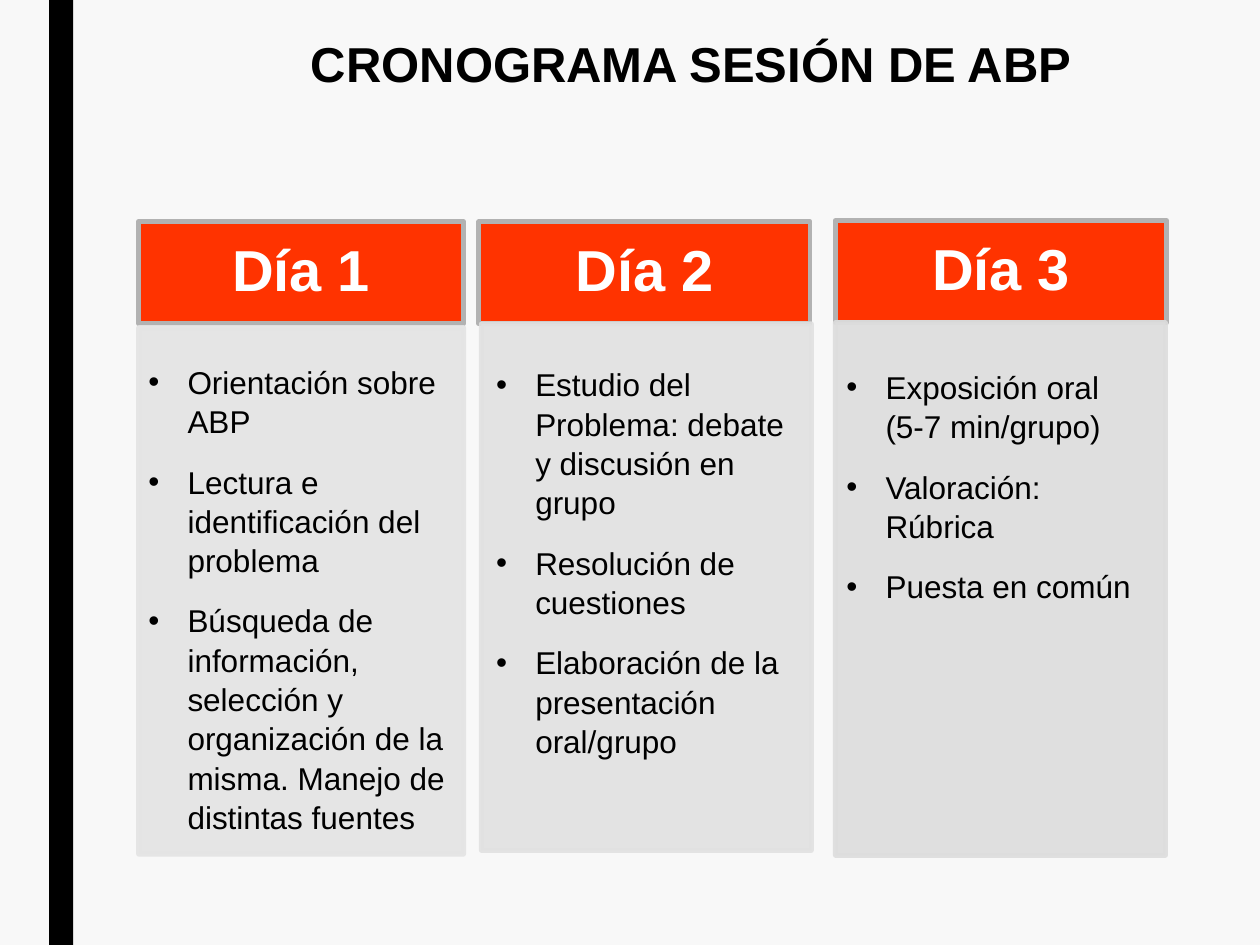
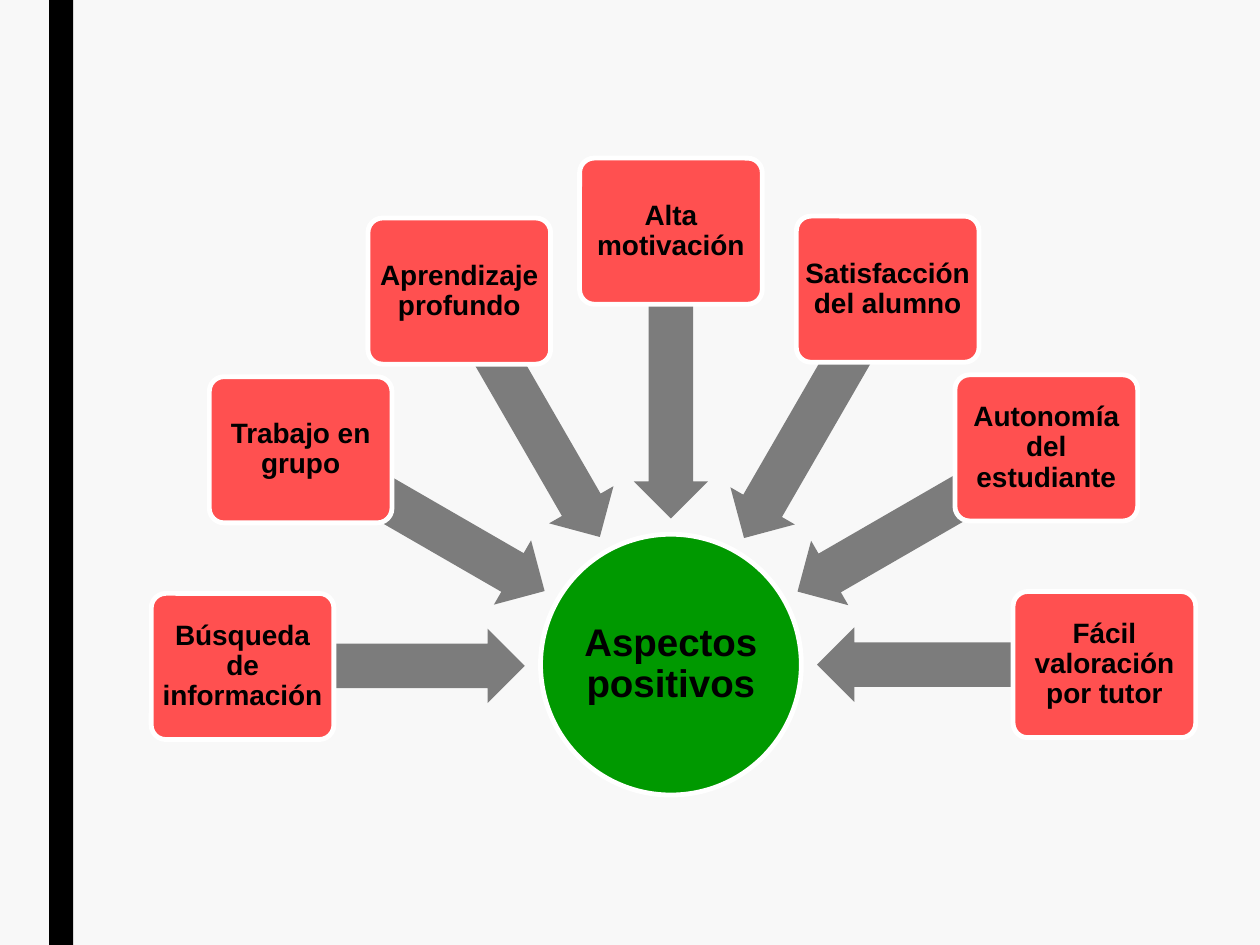
from dataclasses import dataclass
from math import cos, hypot, radians, sin

from lxml.etree import SubElement
from pptx import Presentation
from pptx.dml.color import RGBColor
from pptx.enum.shapes import MSO_SHAPE
from pptx.enum.text import MSO_ANCHOR, PP_ALIGN
from pptx.oxml.ns import qn
from pptx.util import Inches, Pt


@dataclass(frozen=True)
class Theme:
    font: str = "Arial"
    background: str = "F8F8F8"
    black: str = "000000"
    white: str = "FFFFFF"
    day_fill: str = "FF3300"
    day_border: str = "B2B2B2"
    hub_fill: str = "009900"
    aspect_fill: str = "FF5050"
    arrow_fill: str = "7C7C7C"
    title_size: float = 28
    day_size: float = 33
    list_size: float = 18
    hub_size: float = 22
    aspect_size: float = 16
    border: float = 2.75


THEME = Theme()

TITLE = "CRONOGRAMA SESIÓN DE ABP"

# Boxes are (left, top, width, height) in inches.
DAYS = [
    {
        "name": "Día 1",
        "header": (1.1, 1.76, 2.58, 0.81),
        "panel": (1.1, 2.6, 2.58, 4.18),
        "panel_fill": "E4E4E4",
        "list": (1.08, 2.82, 2.65, 3.77),
        "tasks": [
            "Orientación sobre ABP",
            "Lectura e identificación del problema",
            "Búsqueda de información, selección y organización de la misma. "
            "Manejo de distintas fuentes",
        ],
    },
    {
        "name": "Día 2",
        "header": (3.8, 1.76, 2.63, 0.81),
        "panel": (3.82, 2.57, 2.62, 4.18),
        "panel_fill": "E1E1E1",
        "list": (3.84, 2.84, 2.56, 3.16),
        "tasks": [
            "Estudio del Problema: debate y discusión en grupo",
            "Resolución de cuestiones",
            "Elaboración de la presentación oral/grupo",
        ],
    },
    {
        "name": "Día 3",
        "header": (6.63, 1.75, 2.63, 0.81),
        "panel": (6.63, 2.56, 2.62, 4.23),
        "panel_fill": "DDDDDD",
        "list": (6.62, 2.86, 2.66, 1.95),
        "tasks": [
            "Exposición oral\v(5-7 min/grupo)",
            "Valoración: Rúbrica",
            "Puesta en común",
        ],
    },
]

HUB = "Aspectos positivos"
ASPECTS = [
    "Búsqueda de información",
    "Trabajo en grupo",
    "Aprendizaje profundo",
    "Alta motivación",
    "Satisfacción del alumno",
    "Autonomía del estudiante",
    "Fácil valoración por tutor",
]

HUB_CENTER = (5.325, 5.275)
HUB_DIAMETER = 2.07
ORBIT = 3.44
LEFT_SHIFT = (0.04, 0.015)
ASPECT_SIZE = (1.45, 1.16)
ARROW_TIP_DISTANCE = 1.16
ARROW_HEIGHT = 0.59


def color(value):
    return RGBColor.from_string(value)


def centered(center, size):
    return (center[0] - size[0] / 2, center[1] - size[1] / 2, *size)


def add_box(slide, kind, box, fill, border=None):
    shape = slide.shapes.add_shape(kind, *map(Inches, box))
    shape.shadow.inherit = False
    shape.fill.solid()
    shape.fill.fore_color.rgb = color(fill)
    if border:
        shape.line.color.rgb = color(border)
        shape.line.width = Pt(THEME.border)
    else:
        shape.line.fill.background()
    return shape


def format_runs(paragraph, size, text_color=THEME.black, bold=False):
    for run in paragraph.runs:
        run.font.name = THEME.font
        run.font.size = Pt(size)
        run.font.bold = bold
        run.font.color.rgb = color(text_color)


def write_label(shape, text, size, text_color, insets):
    """Write bold text in the middle of a shape; insets are horizontal, vertical."""
    frame = shape.text_frame
    frame.word_wrap = True
    frame.vertical_anchor = MSO_ANCHOR.MIDDLE
    frame.margin_left = frame.margin_right = Inches(insets[0])
    frame.margin_top = frame.margin_bottom = Inches(insets[1])
    frame.text = text
    paragraph = frame.paragraphs[0]
    paragraph.alignment = PP_ALIGN.CENTER
    paragraph.line_spacing = 0.9
    format_runs(paragraph, size, text_color, bold=True)


def make_translucent(shape, percent):
    for element in shape.element.spPr.iter(qn("a:srgbClr")):
        SubElement(element, qn("a:alpha"), val=str(percent * 1000))


def add_bullet(paragraph):
    properties = paragraph._p.get_or_add_pPr()
    indent = Inches(0.31)
    properties.set("marL", str(indent))
    properties.set("indent", str(-indent))
    SubElement(properties, qn("a:buFont"), typeface=THEME.font)
    SubElement(properties, qn("a:buChar"), char="•")


def add_task_list(slide, box, tasks):
    frame = slide.shapes.add_textbox(*map(Inches, box)).text_frame
    frame.word_wrap = True
    for index, task in enumerate(tasks):
        paragraph = frame.add_paragraph() if index else frame.paragraphs[0]
        paragraph.text = task
        paragraph.space_before = paragraph.space_after = Pt(6)
        paragraph.line_spacing = 1.04
        add_bullet(paragraph)
        format_runs(paragraph, THEME.list_size)


def add_slide(presentation):
    """Add a blank slide with the black side band."""
    slide = presentation.slides.add_slide(presentation.slide_layouts[6])
    add_box(slide, MSO_SHAPE.RECTANGLE, (0.39, 0, 0.19, 7.5), THEME.black)
    return slide


def build_schedule(presentation):
    slide = add_slide(presentation)
    for day in DAYS:
        header = add_box(slide, MSO_SHAPE.RECTANGLE, day["header"],
                         THEME.day_fill, THEME.day_border)
        write_label(header, day["name"], THEME.day_size, THEME.white, (0.26, 0.15))
        panel = add_box(slide, MSO_SHAPE.RECTANGLE, day["panel"],
                        day["panel_fill"], day["panel_fill"])
        make_translucent(panel, 90)
    for day in DAYS:
        add_task_list(slide, day["list"], day["tasks"])

    title_box = (2.37, 0.22, 6.3, 0.57)
    frame = slide.shapes.add_textbox(*map(Inches, title_box)).text_frame
    frame.word_wrap = False
    frame.text = TITLE
    format_runs(frame.paragraphs[0], THEME.title_size, bold=True)


def add_arrow(slide, start, angle):
    """Point an arrow from start towards the hub, stopping just short of it."""
    distance = hypot(start[0] - HUB_CENTER[0], start[1] - HUB_CENTER[1])
    share = (distance + ARROW_TIP_DISTANCE) / 2 / distance
    middle = [hub + (end - hub) * share for hub, end in zip(HUB_CENTER, start)]
    size = (distance - ARROW_TIP_DISTANCE, ARROW_HEIGHT)
    arrow = add_box(slide, MSO_SHAPE.LEFT_ARROW, centered(middle, size), THEME.arrow_fill)
    arrow.adjustments[0] = 0.6
    arrow.adjustments[1] = 0.5
    arrow.rotation = -angle % 360


def build_aspects(presentation):
    slide = add_slide(presentation)
    hub = add_box(slide, MSO_SHAPE.OVAL, centered(HUB_CENTER, (HUB_DIAMETER, HUB_DIAMETER)),
                  THEME.hub_fill, THEME.white)
    write_label(hub, HUB, THEME.hub_size, THEME.black, (0.02, 0.02))

    step = 180 / (len(ASPECTS) - 1)
    for index, aspect in enumerate(ASPECTS):
        angle = 180 - index * step
        shift = LEFT_SHIFT if angle > 90 else (0, 0)
        center = (HUB_CENTER[0] + ORBIT * cos(radians(angle)) + shift[0],
                  HUB_CENTER[1] - ORBIT * sin(radians(angle)) + shift[1])
        add_arrow(slide, center, angle)
        box = add_box(slide, MSO_SHAPE.ROUNDED_RECTANGLE, centered(center, ASPECT_SIZE),
                      THEME.aspect_fill, THEME.white)
        box.adjustments[0] = 0.1
        write_label(box, aspect, THEME.aspect_size, THEME.black, (0.03, 0.03))


def main():
    presentation = Presentation()
    presentation.slide_width = Inches(10)
    presentation.slide_height = Inches(7.5)
    background = presentation.slide_master.background.fill
    background.solid()
    background.fore_color.rgb = color(THEME.background)
    build_schedule(presentation)
    build_aspects(presentation)
    presentation.save("out.pptx")


if __name__ == "__main__":
    main()
